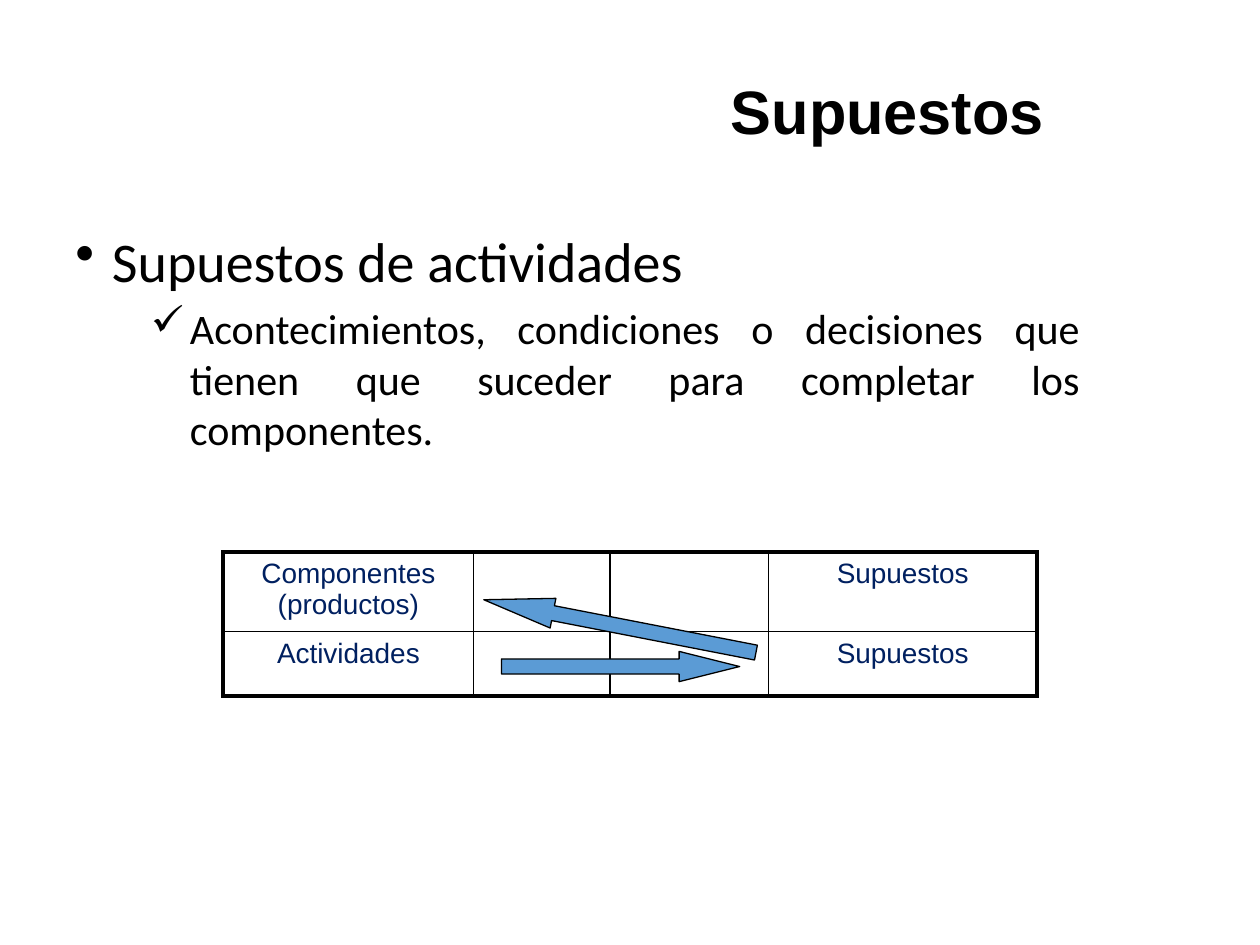
from dataclasses import dataclass

from lxml import etree
from pptx import Presentation
from pptx.dml.color import RGBColor
from pptx.enum.shapes import MSO_SHAPE
from pptx.enum.text import PP_ALIGN
from pptx.oxml.ns import qn
from pptx.util import Inches, Pt

CENTER, JUSTIFY = PP_ALIGN.CENTER, PP_ALIGN.JUSTIFY
RIGHT, LEFT = MSO_SHAPE.RIGHT_ARROW, MSO_SHAPE.LEFT_ARROW


@dataclass(frozen=True)
class Theme:
    ink: str = "000000"
    navy: str = "002060"
    blue: str = "5B9BD5"
    head: str = "Arial"
    body: str = "Calibri"
    title: float = 35
    point: float = 32
    detail: float = 24
    cell: float = 16
    thin: float = 1
    thick: float = 2.25
    edge: float = 0.75


@dataclass(frozen=True)
class Bullet:
    text: str
    mark: str
    size: float
    left: float
    hang: float
    level: int
    gap: float


@dataclass(frozen=True)
class Arrow:
    kind: int
    x: float
    y: float
    width: float
    head: float
    turn: float


THEME = Theme()
BULLETS = [
    Bullet("Supuestos de actividades", "•", THEME.point, 0.29, 0.29, 0, 0),
    Bullet("Acontecimientos, condiciones o decisiones que tienen que suceder "
           "para completar los componentes.", "✓", THEME.detail, 0.91, 0.31, 1, 5),
]
COLS = [1.99, 1.08, 1.26, 2.13]
ROWS = [0.59, 0.51]
CELLS = [
    ["Componentes (productos)", "", "", "Supuestos"],
    ["Actividades", "", "", "Supuestos"],
]
ARROWS = [
    Arrow(RIGHT, 3.98, 5.17, 1.89, 2, 0),
    Arrow(LEFT, 3.82, 4.85, 2.2, 2.33, 11),
]


def style(para, face: str, size: float, color: str, align) -> None:
    para.alignment = align
    para.font.name = face
    para.font.size = Pt(size)
    para.font.color.rgb = RGBColor.from_string(color)


def add_box(slide, x: float, y: float, width: float, height: float):
    box = slide.shapes.add_textbox(Inches(x), Inches(y), Inches(width), Inches(height))
    box.text_frame.word_wrap = True
    return box.text_frame


def add_title(slide, text: str) -> None:
    para = add_box(slide, 4.09, 0.6, 5.91, 0.39).paragraphs[0]
    para.text = text
    para.line_spacing = 0.9
    style(para, THEME.head, THEME.title, THEME.ink, CENTER)
    para.font.bold = True


def add_bullets(slide, items: list[Bullet]) -> None:
    frame = add_box(slide, 0.5, 1.75, 8.17, 0.98)
    for i, item in enumerate(items):
        para = frame.add_paragraph() if i else frame.paragraphs[0]
        para.text = item.text
        para.level = item.level
        para.space_before = Pt(item.gap)
        style(para, THEME.body, item.size, THEME.ink, JUSTIFY)
        props = para._p.get_or_add_pPr()
        props.set("marL", str(Inches(item.left)))
        props.set("indent", str(-Inches(item.hang)))
        mark = etree.Element(qn("a:buChar"), char=item.mark)
        props.find(qn("a:defRPr")).addprevious(mark)


def set_edges(cell, widths: dict[str, float]) -> None:
    props = cell._tc.get_or_add_tcPr()
    for i, (side, width) in enumerate(widths.items()):
        line = etree.Element(qn(f"a:ln{side}"), w=str(Pt(width)))
        fill = etree.SubElement(line, qn("a:solidFill"))
        etree.SubElement(fill, qn("a:srgbClr"), val=THEME.ink)
        props.insert(i, line)


def add_grid(slide) -> None:
    table = slide.shapes.add_table(
        len(ROWS), len(COLS), Inches(1.77), Inches(4.38),
        Inches(sum(COLS)), Inches(sum(ROWS))).table
    table.first_row = table.horz_banding = False
    for col, width in zip(table.columns, COLS):
        col.width = Inches(width)
    for row, height in zip(table.rows, ROWS):
        row.height = Inches(height)
    for r, texts in enumerate(CELLS):
        for c, text in enumerate(texts):
            cell = table.cell(r, c)
            cell.fill.background()
            cell.text = text
            style(cell.text_frame.paragraphs[0], THEME.head, THEME.cell, THEME.navy, CENTER)
            outer = {"L": c == 0, "R": c == len(COLS) - 1,
                     "T": r == 0, "B": r == len(ROWS) - 1}
            set_edges(cell, {side: THEME.thick if out else THEME.thin
                             for side, out in outer.items()})


def add_arrow(slide, arrow: Arrow) -> None:
    shape = slide.shapes.add_shape(
        arrow.kind, Inches(arrow.x), Inches(arrow.y), Inches(arrow.width), Inches(0.24))
    shape.adjustments[0] = 0.5
    shape.adjustments[1] = arrow.head
    shape.rotation = arrow.turn
    shape.shadow.inherit = False
    shape.fill.solid()
    shape.fill.fore_color.rgb = RGBColor.from_string(THEME.blue)
    shape.line.color.rgb = RGBColor.from_string(THEME.ink)
    shape.line.width = Pt(THEME.edge)


def main() -> None:
    deck = Presentation()
    deck.slide_width, deck.slide_height = Inches(10), Inches(7.5)
    slide = deck.slides.add_slide(deck.slide_layouts[6])
    add_title(slide, "Supuestos")
    add_bullets(slide, BULLETS)
    add_grid(slide)
    for arrow in ARROWS:
        add_arrow(slide, arrow)
    deck.save("out.pptx")


if __name__ == "__main__":
    main()
